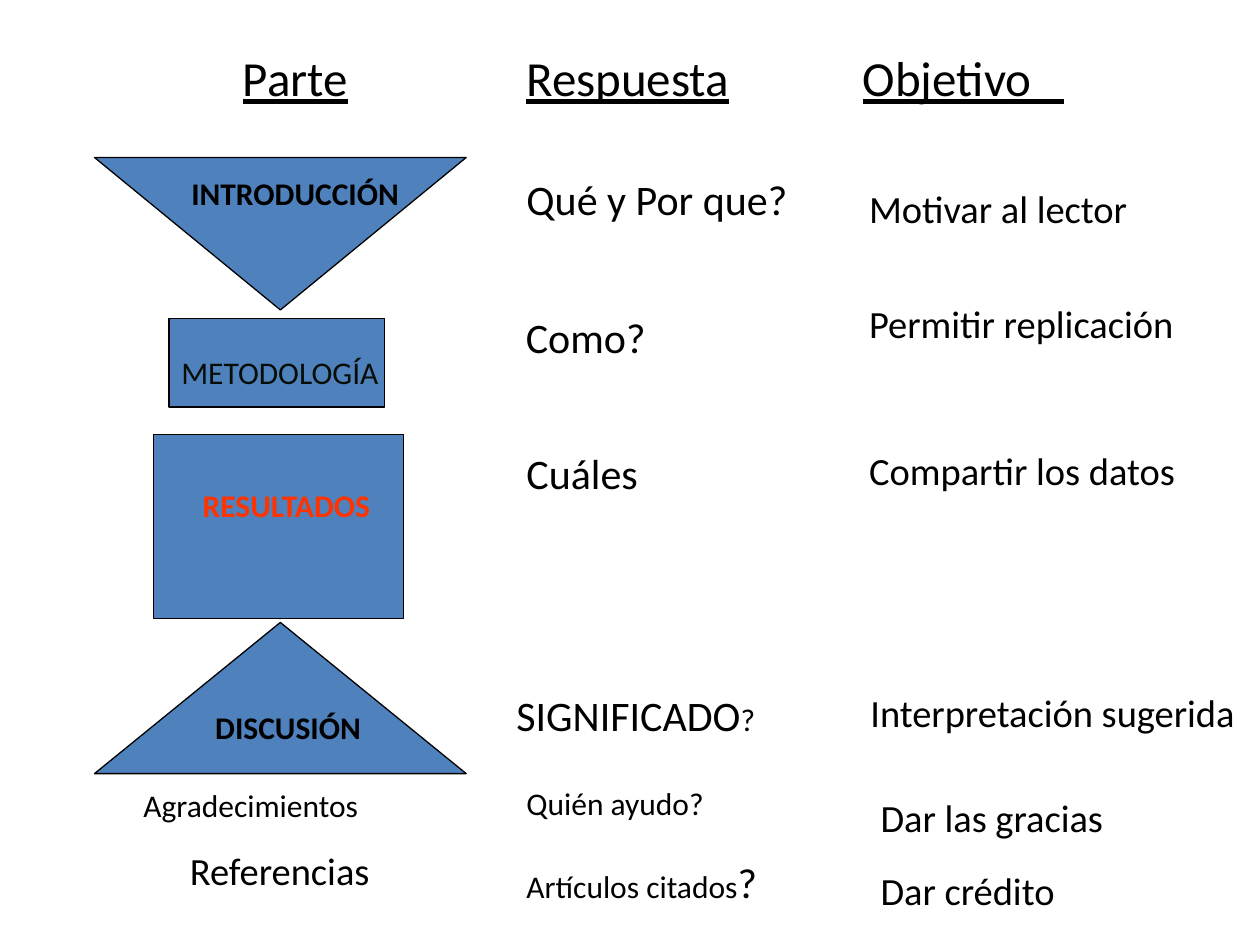
"""Build a slide on the parts of a paper, their questions and their aims."""
from pptx import Presentation
from pptx.dml.color import RGBColor
from pptx.enum.shapes import MSO_SHAPE
from pptx.enum.text import MSO_AUTO_SIZE
from pptx.util import Inches, Pt

RECT = MSO_SHAPE.RECTANGLE
PEAK = MSO_SHAPE.ISOSCELES_TRIANGLE
GROW = MSO_AUTO_SIZE.SHAPE_TO_FIT_TEXT
BLUE = RGBColor(0x4F, 0x81, 0xBD)
BLACK = RGBColor(0, 0, 0)
DARK = RGBColor(0x07, 0x0D, 0x07)
RED = RGBColor(0xFF, 0x33, 0x00)
FONT = "Calibri"

ASK = 4.08
AIM = 6.8
THANK = 6.89

BLOCKS = [
    (RECT, 1.22, 3.45, 1.98, 1.46, 0),
    (PEAK, 0.75, 4.94, 2.95, 1.2, 0),
    (RECT, 1.34, 2.53, 1.71, 0.7, 0),
    (PEAK, 0.75, 1.25, 2.95, 1.21, 180),
]
HEADS = [
    ("Parte", 1.83, 1.13, False),
    ("Respuesta", ASK, 2.06, False),
    ("Objetivo   ", 6.75, 2.33, True),
]
PARTS = [
    ("RESULTADOS", 1.51, 3.81, 1.63, RED, True),
    ("METODOLOGÍA", 1.34, 2.75, 1.98, DARK, False),
    ("INTRODUCCIÓN", 1.42, 1.33, 2, BLACK, True),
    ("DISCUSIÓN", 1.61, 5.57, 1.43, BLACK, True),
]
NOTES = [
    ([("Qué y Por que?", 24)], ASK, 1.33, 2.29, 0.5, False),
    ([("Motivar al lector", 22)], AIM, 1.42, 2.36, 0.47, False),
    ([(" Como?", 24)], 4, 2.42, 1.37, 0.5, False),
    ([("Permitir replicación", 22)], AIM, 2.33, 2.8, 0.47, False),
    ([("Cuáles", 24)], ASK, 3.5, 1.37, 0.91, True),
    ([("Compartir los datos", 22)], AIM, 3.5, 2.85, 0.47, False),
    ([("SIGNIFICADO", 24), ("?", 18)], 4, 5.42, 2.19, 0.51, True),
    ([("Interpretación sugerida", 22)], 6.81, 5.42, 3.33, 0.47, False),
    ([("Agradecimientos", 18)], 1.04, 6.19, 2.27, 0.43, False),
    ([("Referencias", 22)], 1.41, 6.67, 1.83, 0.47, True),
    ([("Artículos citados", 18), ("?", 24)], ASK, 6.75, 2.58, 0.5, True),
    ([("Quién ayudo?", 18)], ASK, 6.17, 2.19, 0.43, True),
    ([("Dar las gracias", 22)], THANK, 6.25, 2.24, 0.47, False),
    ([("Dar crédito", 22)], THANK, 6.83, 1.7, 0.47, False),
]


def add_block(slide, kind, left, top, width, height, turn):
    """Add a blue outlined shape, turned by the given degrees."""
    block = slide.shapes.add_shape(
        kind, Inches(left), Inches(top), Inches(width), Inches(height))
    block.rotation = turn
    block.shadow.inherit = False
    block.fill.solid()
    block.fill.fore_color.rgb = BLUE
    block.line.color.rgb = BLACK
    block.line.width = Pt(0.75)


def add_text(slide, runs, left, top, width, height, wrap,
             color=BLACK, bold=False, under=False):
    """Add a one-line text box from (text, size) runs."""
    box = slide.shapes.add_textbox(
        Inches(left), Inches(top), Inches(width), Inches(height))
    frame = box.text_frame
    frame.word_wrap = wrap
    frame.auto_size = GROW
    for text, size in runs:
        run = frame.paragraphs[0].add_run()
        run.text = text
        font = run.font
        font.name = FONT
        font.size = Pt(size)
        font.color.rgb = color
        font.bold = bold
        font.underline = under


def main():
    """Build and save the slide."""
    deck = Presentation()
    deck.slide_width = Inches(10)
    deck.slide_height = Inches(7.5)
    slide = deck.slides.add_slide(deck.slide_layouts[6])
    for note in NOTES:
        add_text(slide, *note)
    for block in BLOCKS:
        add_block(slide, *block)
    for text, left, top, width, color, bold in PARTS:
        add_text(slide, [(text, 18)], left, top, width, 0.4, True, color, bold)
    for text, left, width, wrap in HEADS:
        add_text(slide, [(text, 28)], left, 0.33, width, 0.57, wrap, under=True)
    deck.save("out.pptx")


if __name__ == "__main__":
    main()
